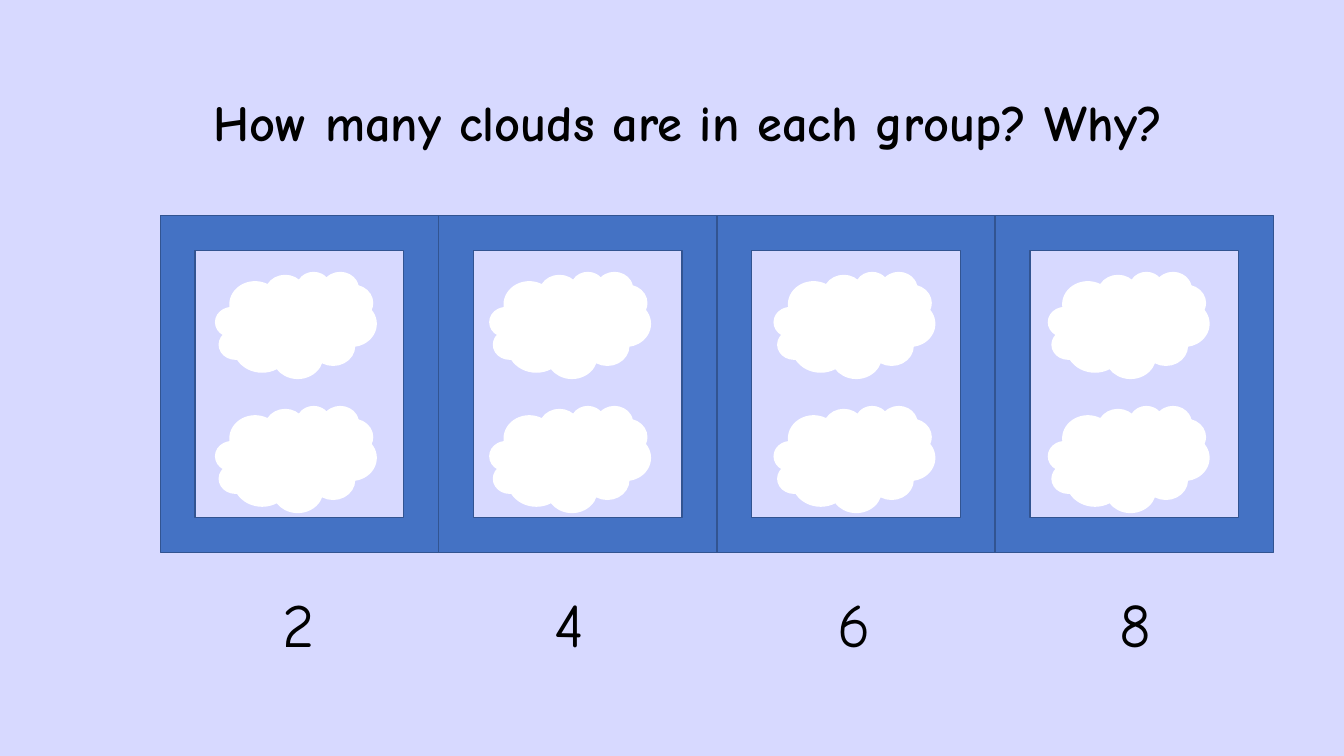
from pptx import Presentation
from pptx.dml.color import RGBColor
from pptx.enum.shapes import MSO_SHAPE as SHAPE
from pptx.enum.text import MSO_ANCHOR as ANCHOR, PP_ALIGN as ALIGN
from pptx.util import Inches, Pt

LAVENDER = RGBColor(0xD7, 0xD9, 0xFF)
WHITE = RGBColor(0xFF, 0xFF, 0xFF)
BLUE = RGBColor(0x44, 0x72, 0xC4)
NAVY = RGBColor(0x32, 0x54, 0x91)
BLACK = RGBColor(0, 0, 0)


class CloudSlide:
    """Draws the elements of a counting slide in one style."""

    font = "Comic Neue"

    def __init__(self, prs):
        self.s = prs.slides.add_slide(prs.slide_layouts[6])
        fill = self.s.background.fill
        fill.solid()
        fill.fore_color.rgb = LAVENDER

    def shape(self, kind, x, y, w, h, fill, line):
        sp = self.s.shapes.add_shape(kind, Inches(x), Inches(y), Inches(w), Inches(h))
        sp.shadow.inherit = False
        sp.fill.solid()
        sp.fill.fore_color.rgb = fill
        sp.line.color.rgb = line
        sp.line.width = Pt(1)

    def cloud(self, x, y):
        self.shape(SHAPE.CLOUD, x, y, 1.59, 1.05, WHITE, WHITE)

    def frame(self, x, y, w, h):
        self.shape(SHAPE.FRAME, x, y, w, h, BLUE, NAVY)

    def text(self, text, x, y, w, h, size, bold=False):
        tf = self.s.shapes.add_textbox(Inches(x), Inches(y), Inches(w), Inches(h)).text_frame
        tf.word_wrap = True
        tf.vertical_anchor = ANCHOR.BOTTOM
        p = tf.paragraphs[0]
        p.alignment = ALIGN.CENTER
        r = p.add_run()
        r.text = text
        r.font.name = self.font
        r.font.size = Pt(size)
        r.font.bold = bold
        r.font.color.rgb = BLACK


def main():
    prs = Presentation()
    prs.slide_width, prs.slide_height = Inches(13.33), Inches(7.5)
    slide = CloudSlide(prs)
    slide.text("How many clouds are in each group? Why?", 1.59, 0.24, 10.47, 1.31, 36, True)

    groups = [("2", 2.14, 2.31), ("4", 4.86, 4.99), ("6", 7.68, 7.82), ("8", 10.4, 10.61)]
    frame_width = 2.76
    for i, (number, cloud_x, number_x) in enumerate(groups):
        for cloud_y in (2.7, 4.03):
            slide.cloud(cloud_x, cloud_y)
        slide.frame(1.59 + i * frame_width, 2.14, frame_width, 3.34)
        slide.text(number, number_x, 5.76, 1.31, 0.84, 44)

    prs.save("out.pptx")


if __name__ == "__main__":
    main()
